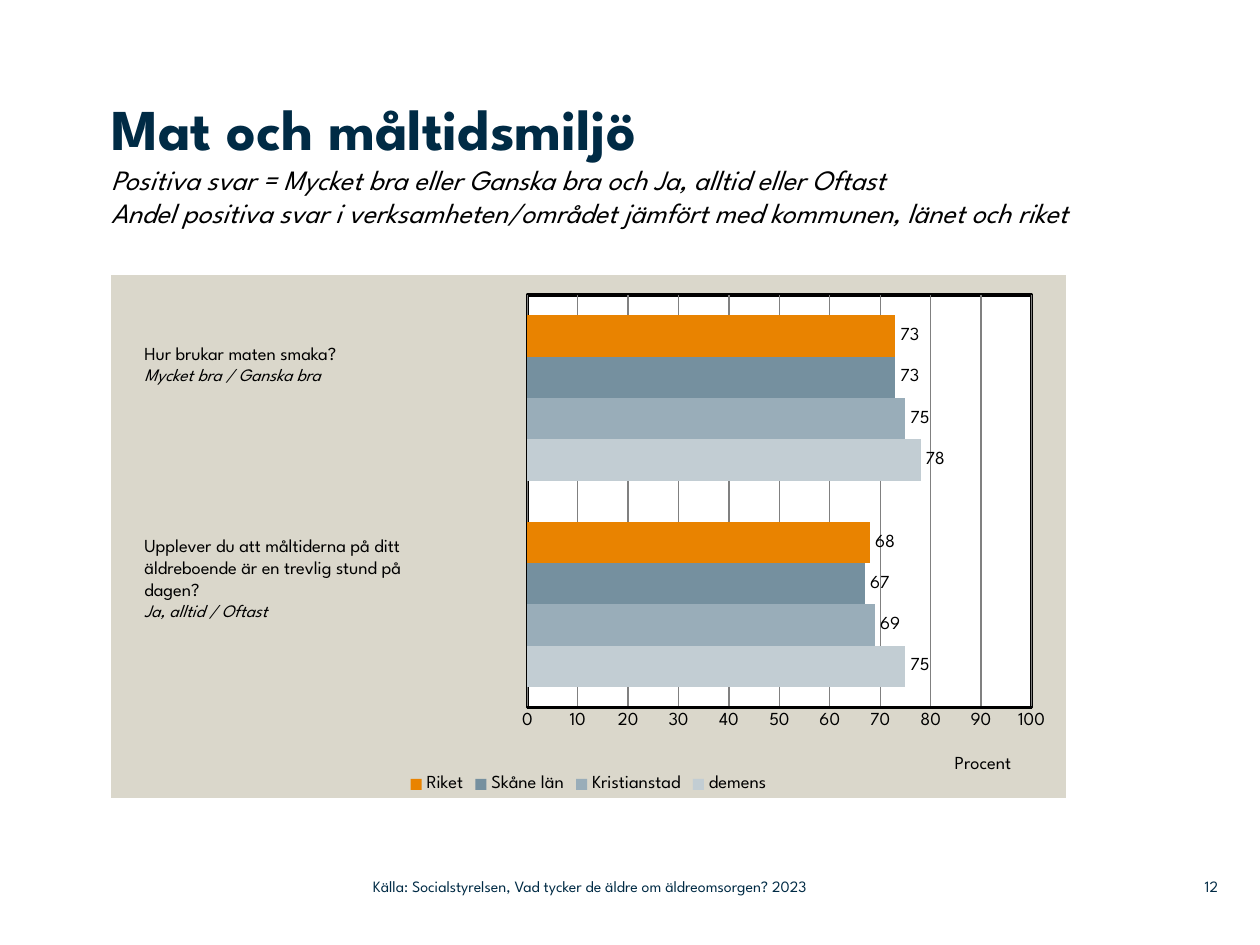
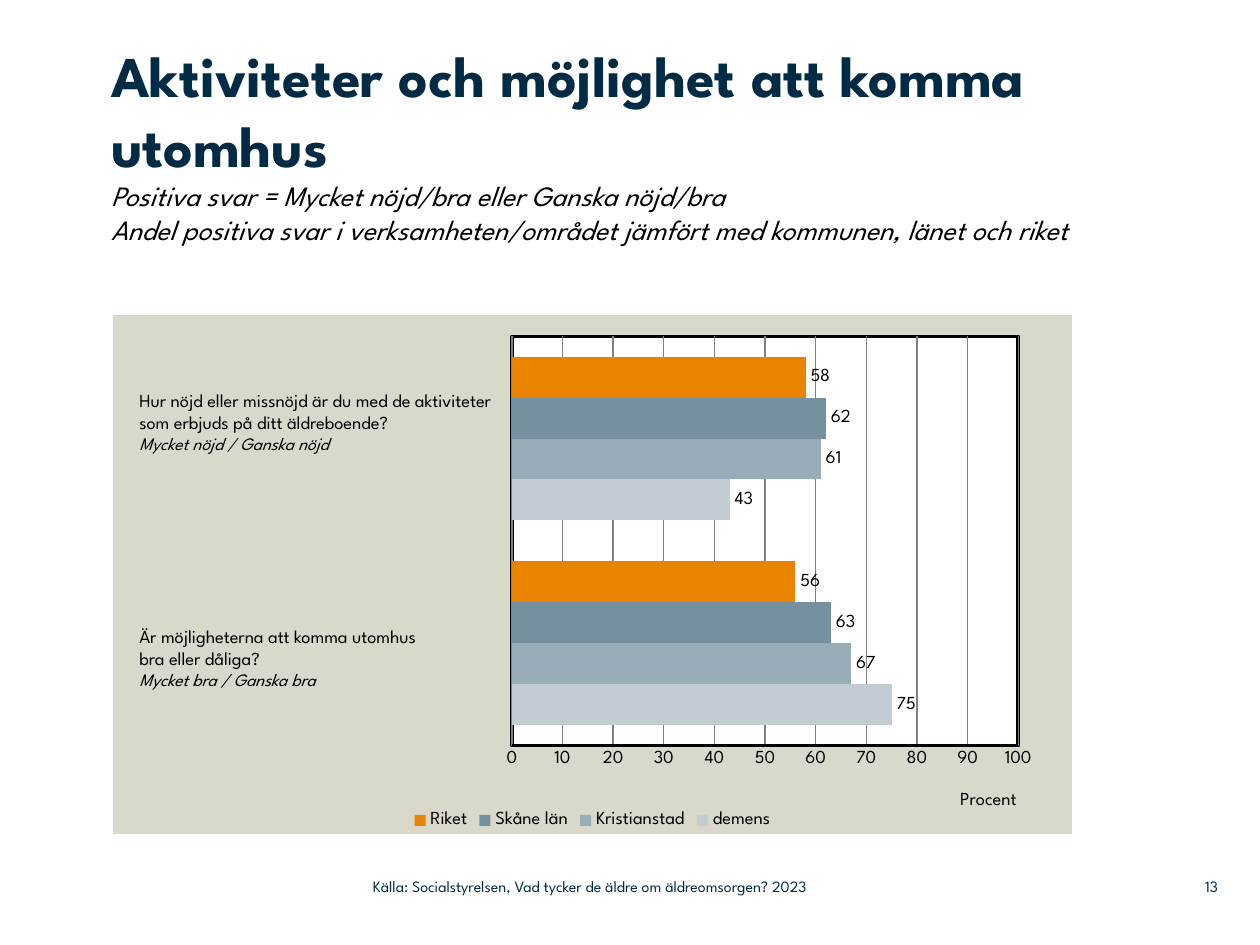
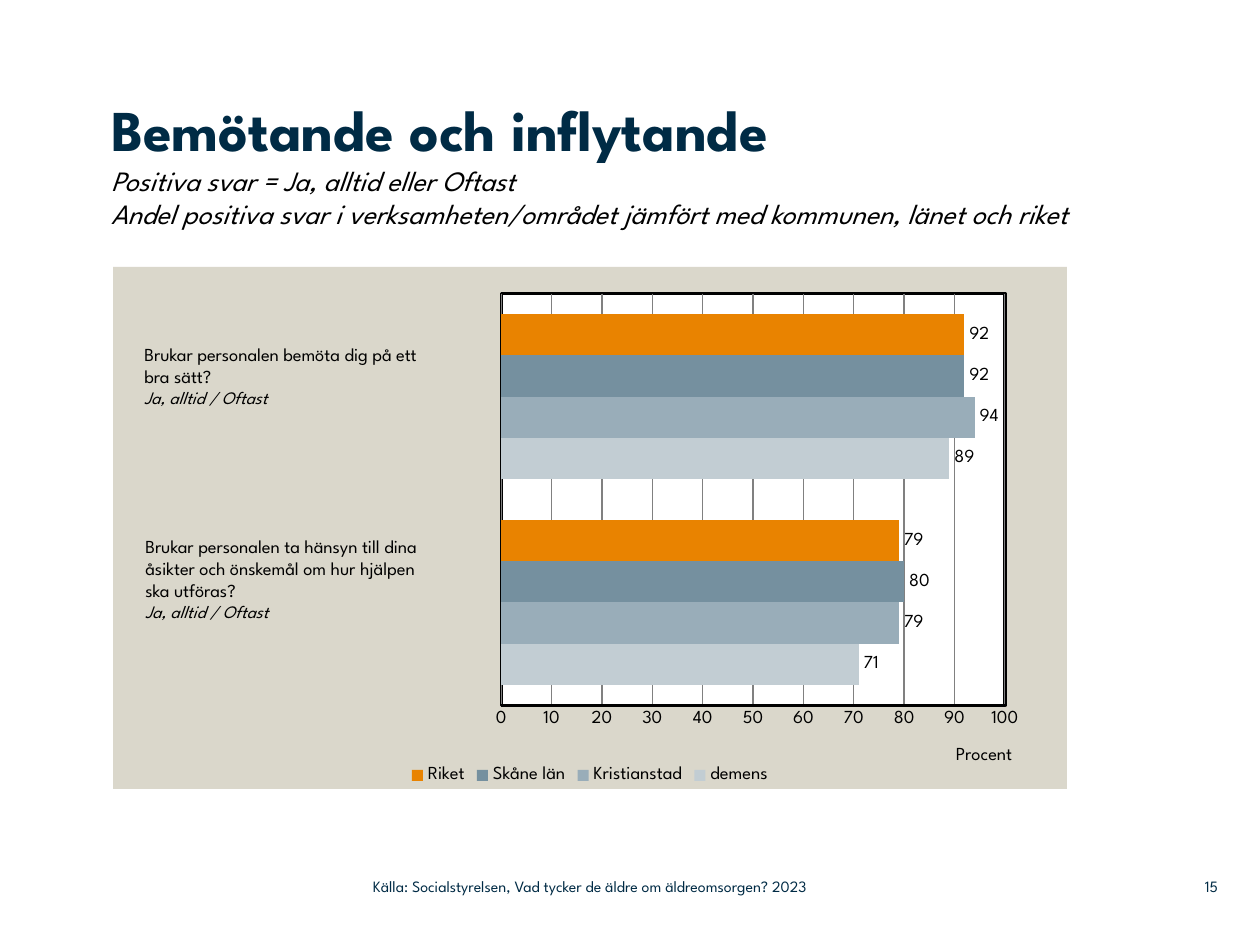
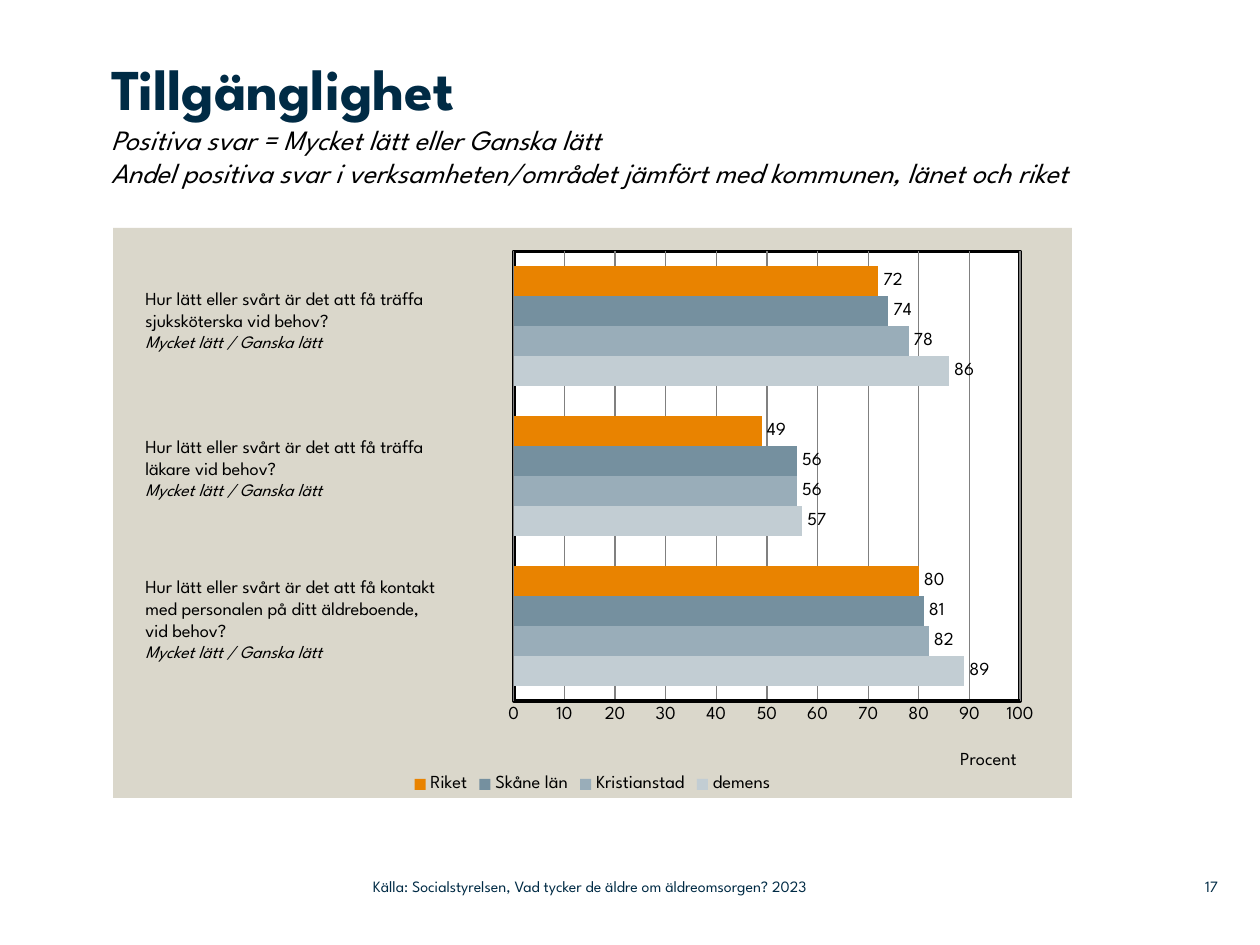
from dataclasses import dataclass

from lxml.etree import SubElement
from pptx import Presentation
from pptx.chart.data import CategoryChartData
from pptx.dml.color import RGBColor
from pptx.enum.chart import XL_CHART_TYPE as ChartType
from pptx.enum.chart import XL_LABEL_POSITION as LabelPosition
from pptx.enum.chart import XL_LEGEND_POSITION as LegendPosition
from pptx.enum.chart import XL_TICK_MARK as TickMark
from pptx.enum.text import MSO_ANCHOR as Anchor
from pptx.enum.text import MSO_AUTO_SIZE as AutoSize
from pptx.enum.text import PP_ALIGN as Align
from pptx.oxml.ns import qn
from pptx.util import Emu, Pt

EMU_PER_PX = 914400 / 126


@dataclass(frozen=True)
class Theme:
    font: str = "League Spartan"
    navy: str = "002B45"
    black: str = "000000"
    white: str = "FFFFFF"
    panel: str = "DAD7CB"
    grid: str = "808080"
    title_size: float = 33
    subtitle_size: float = 16
    text_size: float = 10.5
    answer_size: float = 10
    footer_size: float = 9


THEME = Theme()
SERIES_COLORS = {"demens": "C2CDD3", "Kristianstad": "99ADB9",
                 "Skåne län": "75909F", "Riket": "E98300"}
COMPARISON = "Andel positiva svar i verksamheten/området jämfört med kommunen, länet och riket"
SOURCE = "Källa: Socialstyrelsen, Vad tycker de äldre om äldreomsorgen? 2023"
FOOTER_TOP, FOOTER_HEIGHT = 868, 37
PLOT_SIZE = (0.528, 0.789)
AXIS_TITLE_POSITION = (0.88, 0.91)
NO_MARGINS = dict.fromkeys(
    ("margin_left", "margin_top", "margin_right", "margin_bottom"), 0)


@dataclass(frozen=True)
class Question:
    box: tuple
    lines: tuple
    answer: str


@dataclass(frozen=True)
class Page:
    number: int
    title: str
    positive: str
    title_box: tuple
    chart_box: tuple
    plot_origin: tuple
    values: tuple  # one row per series, categories from the bottom up
    questions: tuple


PAGES = (
    Page(12, "Mat och måltidsmiljö",
         "Positiva svar = Mycket bra eller Ganska bra och Ja, alltid eller Oftast",
         (111, 93, 1061, 181), (111, 275, 955, 523), (0.436, 0.038),
         ((75, 78), (69, 75), (67, 73), (68, 73)),
         (Question((132, 336, 349, 79), ("Hur brukar maten smaka?",),
                   "Mycket bra / Ganska bra"),
          Question((132, 528, 349, 123),
                   ("Upplever du att måltiderna på ditt äldreboende är en trevlig stund på",
                    "dagen?"), "Ja, alltid / Oftast"))),
    Page(13, "Aktiviteter och möjlighet att komma utomhus",
         "Positiva svar = Mycket nöjd/bra eller Ganska nöjd/bra",
         (111, 40, 983, 238), (113, 315, 959, 519), (0.416, 0.041),
         ((75, 43), (67, 61), (63, 62), (56, 58)),
         (Question((127, 383, 378, 123),
                   ("Hur nöjd eller missnöjd är du med de aktiviteter som erbjuds "
                    "på ditt äldreboende?",), "Mycket nöjd / Ganska nöjd"),
          Question((127, 619, 379, 102),
                   ("Är möjligheterna att komma utomhus", "bra eller dåliga?"),
                   "Mycket bra / Ganska bra"))),
    Page(15, "Bemötande och inflytande",
         "Positiva svar = Ja, alltid eller Oftast",
         (111, 94, 1013, 151), (113, 267, 954, 522), (0.407, 0.051),
         ((71, 89), (79, 94), (80, 92), (79, 92)),
         (Question((132, 337, 374, 102),
                   ("Brukar personalen bemöta dig på ett", "bra sätt?"),
                   "Ja, alltid / Oftast"),
          Question((133, 529, 379, 123),
                   ("Brukar personalen ta hänsyn till dina",
                    "åsikter och önskemål om hur hjälpen", "ska utföras?"),
                   "Ja, alltid / Oftast"))),
    Page(17, "Tillgänglighet",
         "Positiva svar = Mycket lätt eller Ganska lätt",
         (111, 53, 979, 175), (113, 228, 959, 570), (0.418, 0.041),
         ((89, 57, 86), (82, 56, 78), (81, 56, 74), (80, 49, 72)),
         (Question((133, 281, 377, 102),
                   ("Hur lätt eller svårt är det att få träffa sjuksköterska vid behov?",),
                   "Mycket lätt / Ganska lätt"),
          Question((133, 429, 369, 102),
                   ("Hur lätt eller svårt är det att få träffa", "läkare vid behov?"),
                   "Mycket lätt / Ganska lätt"),
          Question((133, 569, 379, 123),
                   ("Hur lätt eller svårt är det att få kontakt",
                    "med personalen på ditt äldreboende,", "vid behov?"),
                   "Mycket lätt / Ganska lätt"))),
)


def px(length):
    return Emu(round(length * EMU_PER_PX))


def emu_box(box):
    return [px(length) for length in box]


def apply(target, formats):
    for name, value in formats.items():
        setattr(target, name, value)


def style_font(font, size, color=THEME.black, bold=False, italic=False):
    apply(font, {"name": THEME.font, "size": Pt(size), "bold": bold, "italic": italic})
    font.color.rgb = RGBColor.from_string(color)


def add_run(paragraph, text, size, **style):
    run = paragraph.add_run()
    run.text = text
    style_font(run.font, size, **style)


def add_title(slide, page):
    title = slide.shapes.title
    apply(title, dict(zip(("left", "top", "width", "height"), emu_box(page.title_box))))
    frame = title.text_frame
    apply(frame, {**NO_MARGINS, "word_wrap": True, "auto_size": AutoSize.NONE,
                  "vertical_anchor": Anchor.TOP})
    heading = frame.paragraphs[0]
    heading.alignment = Align.LEFT
    add_run(heading, page.title, THEME.title_size, color=THEME.navy, bold=True)
    for subtitle in (page.positive, COMPARISON):
        heading.add_line_break()
        add_run(heading, subtitle, THEME.subtitle_size, italic=True)
    for line_break in heading._p.findall(qn("a:br")):
        SubElement(line_break, qn("a:rPr"), sz=str(THEME.subtitle_size * 100))


def add_question(slide, question):
    frame = slide.shapes.add_textbox(*emu_box(question.box)).text_frame
    apply(frame, {"word_wrap": True, "auto_size": AutoSize.SHAPE_TO_FIT_TEXT})
    for index, line in enumerate(question.lines):
        paragraph = frame.add_paragraph() if index else frame.paragraphs[0]
        add_run(paragraph, line, THEME.text_size)
    add_run(frame.add_paragraph(), question.answer, THEME.answer_size, italic=True)


def add_footer_text(slide, left, width, text, alignment=Align.LEFT):
    box = emu_box((left, FOOTER_TOP, width, FOOTER_HEIGHT))
    frame = slide.shapes.add_textbox(*box).text_frame
    apply(frame, {**NO_MARGINS, "word_wrap": True, "vertical_anchor": Anchor.MIDDLE})
    frame.paragraphs[0].alignment = alignment
    add_run(frame.paragraphs[0], text, THEME.footer_size, color=THEME.navy)


def set_layout(parent, origin, size=None):
    """Place a chart part by fractions of the chart area."""
    layout = parent.find(qn("c:layout"))
    if layout is None:
        layout = SubElement(parent, qn("c:layout"))
        parent.insert(0, layout)
    manual = SubElement(layout, qn("c:manualLayout"))
    settings = {"xMode": "edge", "yMode": "edge", "x": origin[0], "y": origin[1]}
    if size:
        settings = {"layoutTarget": "inner", **settings, "w": size[0], "h": size[1]}
    for tag, value in settings.items():
        SubElement(manual, qn(f"c:{tag}"), val=str(value))


def add_solid_fill(parent, color):
    fill = SubElement(parent, qn("a:solidFill"))
    SubElement(fill, qn("a:srgbClr"), val=color)


def add_area_format(parent, fill, line=None):
    """Give a chart area its fill and outline; no line colour means no outline."""
    properties = SubElement(parent, qn("c:spPr"))
    add_solid_fill(properties, fill)
    outline = SubElement(properties, qn("a:ln"), w=str(Pt(2)))
    if line:
        add_solid_fill(outline, line)
    else:
        SubElement(outline, qn("a:noFill"))
    return properties


def style_line(line, color, width):
    line.color.rgb = RGBColor.from_string(color)
    line.width = Pt(width)


def style_value_axis(axis):
    apply(axis, {"minimum_scale": 0, "maximum_scale": 100, "major_unit": 10,
                 "major_tick_mark": TickMark.NONE, "minor_tick_mark": TickMark.NONE,
                 "has_major_gridlines": True})
    style_line(axis.format.line, THEME.black, 2)
    style_line(axis.major_gridlines.format.line, THEME.grid, 0.75)
    caption = axis.axis_title.text_frame.paragraphs[0]
    add_run(caption, "Procent", THEME.text_size)
    set_layout(axis.axis_title._element, AXIS_TITLE_POSITION)


def style_series(series):
    fill = series.format.fill
    fill.solid()
    fill.fore_color.rgb = RGBColor.from_string(SERIES_COLORS[series.name])
    apply(series.data_labels, {"show_value": True, "position": LabelPosition.OUTSIDE_END})
    style_font(series.data_labels.font, THEME.text_size)


def add_answer_chart(slide, page):
    data = CategoryChartData(number_format="0")
    data.categories = [str(index + 1) for index in range(len(page.questions))]
    for name, values in zip(SERIES_COLORS, page.values):
        data.add_series(name, values)
    chart = slide.shapes.add_chart(
        ChartType.BAR_CLUSTERED, *emu_box(page.chart_box), data).chart
    apply(chart, {"has_title": False, "has_legend": True})
    style_font(chart.font, THEME.text_size)
    apply(chart.legend, {"position": LegendPosition.BOTTOM, "include_in_layout": False})
    style_font(chart.legend.font, THEME.text_size)
    chart.category_axis.visible = False
    style_value_axis(chart.value_axis)
    apply(chart.plots[0], {"gap_width": 100, "overlap": 0, "vary_by_categories": False})
    for series in chart.plots[0].series:
        style_series(series)

    chart_space = chart.element
    plot_area = chart_space.find(f".//{qn('c:plotArea')}")
    set_layout(plot_area, page.plot_origin, PLOT_SIZE)
    add_area_format(plot_area, THEME.white, THEME.black)
    panel = add_area_format(chart_space, THEME.panel)
    chart_space.find(qn("c:chart")).addnext(panel)


def add_page(deck, page):
    slide = deck.slides.add_slide(deck.slide_layouts.get_by_name("Title Only"))
    add_answer_chart(slide, page)
    add_title(slide, page)
    for question in page.questions:
        add_question(slide, question)
    add_footer_text(slide, 1159, 59, str(page.number), Align.RIGHT)
    add_footer_text(slide, 373, 558, SOURCE)


def main():
    deck = Presentation()
    apply(deck, {"slide_width": px(1260), "slide_height": px(945)})
    for page in PAGES:
        add_page(deck, page)
    deck.save("out.pptx")


if __name__ == "__main__":
    main()
